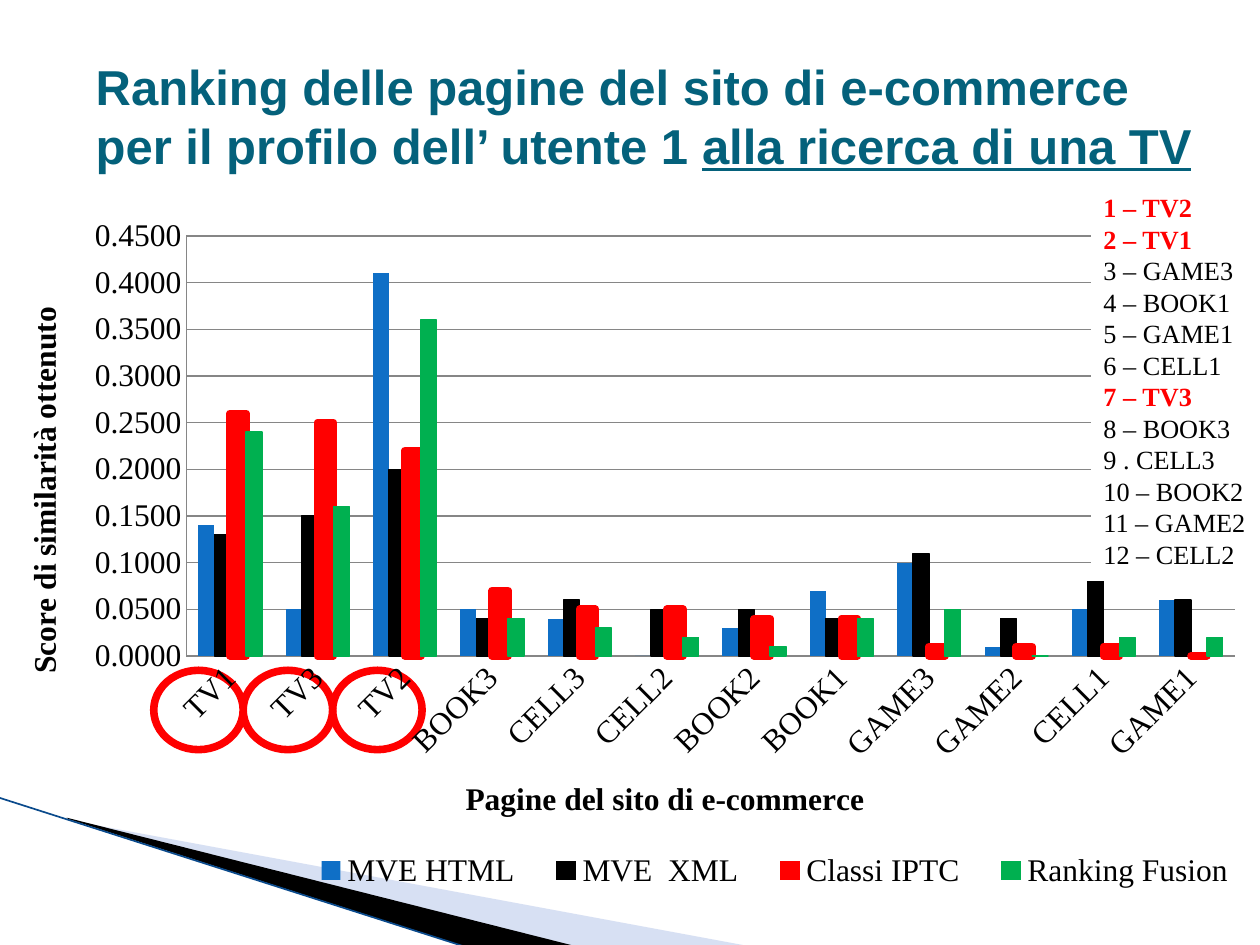
from dataclasses import dataclass
from typing import NamedTuple, Optional

from lxml.etree import SubElement
from pptx import Presentation
from pptx.chart.data import CategoryChartData
from pptx.dml.color import RGBColor
from pptx.enum.chart import XL_CHART_TYPE as ChartType
from pptx.enum.chart import XL_LEGEND_POSITION as LegendPosition
from pptx.enum.chart import XL_TICK_MARK as TickMark
from pptx.enum.shapes import MSO_CONNECTOR as Connector
from pptx.enum.shapes import MSO_SHAPE as Shape
from pptx.enum.text import MSO_ANCHOR as Anchor
from pptx.enum.text import PP_ALIGN as Align
from pptx.oxml import parse_xml
from pptx.oxml.ns import nsdecls, qn
from pptx.util import Inches, Pt

WIDTH, HEIGHT = 10, 7.5


@dataclass(frozen=True)
class Theme:
    heading_font: str = "Arial"
    body_font: str = "Times New Roman"
    heading_size: int = 28
    chart_size: int = 18
    list_size: int = 15
    heading: str = "04617B"
    ink: str = "000000"
    paper: str = "FFFFFF"
    accent: str = "FF0000"
    grid: str = "868686"
    pale: str = "9DB2E1"
    edge: str = "0A4A8C"
    thick: float = 4.33
    thin: float = 0.75


class Box(NamedTuple):
    left: float
    top: float
    width: float
    height: float

    def emu(self) -> list:
        return [Inches(length) for length in self]


class Series(NamedTuple):
    name: str
    values: tuple
    color: str
    line: Optional[float] = None


class Swoosh(NamedTuple):
    """A filled outline with its points in hundredths of an inch."""
    points: tuple
    color: str
    alpha: Optional[int] = None


THEME = Theme()

SWOOSHES = (
    Swoosh(((55, 651), (595, 751), (456, 751), (55, 650)), THEME.pale, 40),
    Swoosh(((53, 649), (457, 751), (372, 752), (54, 650)), THEME.ink),
)
PAGES = ("TV1", "TV3", "TV2", "BOOK3", "CELL3", "CELL2",
         "BOOK2", "BOOK1", "GAME3", "GAME2", "CELL1", "GAME1")
SERIES = (
    Series("MVE HTML", (0.14, 0.05, 0.41, 0.05, 0.04, 0,
                        0.03, 0.07, 0.1, 0.01, 0.05, 0.06), "0F6FC6"),
    Series("MVE  XML", (0.13, 0.15, 0.2, 0.04, 0.06, 0.05,
                        0.05, 0.04, 0.11, 0.04, 0.08, 0.06), THEME.ink, THEME.thin),
    Series("Classi IPTC", (0.26, 0.25, 0.22, 0.07, 0.05, 0.05,
                           0.04, 0.04, 0.01, 0.01, 0.01, 0), THEME.accent, THEME.thick),
    Series("Ranking Fusion", (0.24, 0.16, 0.36, 0.04, 0.03, 0.02,
                              0.01, 0.04, 0.05, 0, 0.02, 0.02), "00B050", THEME.thin),
)
RANKING = ("1 – TV2", "2 – TV1", "3 – GAME3", "4 – BOOK1", "5 – GAME1", "6 – CELL1",
           "7 – TV3", "8 – BOOK3", "9 . CELL3", "10 – BOOK2", "11 – GAME2", "12 – CELL2")


def set_font(font, color: str, **formats) -> None:
    for name, value in formats.items():
        setattr(font, name, value)
    font.color.rgb = RGBColor.from_string(color)


def paint(item, color: str) -> None:
    item.fill.solid()
    item.fill.fore_color.rgb = RGBColor.from_string(color)


def stroke(line, color: str, width: float) -> None:
    line.color.rgb = RGBColor.from_string(color)
    line.width = Pt(width)


def place(element, **shares: float) -> None:
    """Give a chart part a manual layout in shares of the chart's size."""
    for old in element.findall(qn("c:layout")):
        element.remove(old)
    layout = parse_xml(f"<c:layout {nsdecls('c')}><c:manualLayout/></c:layout>")
    manual = layout[0]
    if element.tag == qn("c:plotArea"):
        SubElement(manual, qn("c:layoutTarget"), val="inner")
    for mode in ("xMode", "yMode"):
        SubElement(manual, qn(f"c:{mode}"), val="edge")
    for name, share in shares.items():
        SubElement(manual, qn(f"c:{name}"), val=str(share))
    overlay = element.find(qn("c:overlay"))
    if overlay is None:
        element.insert(0, layout)
    else:
        overlay.addprevious(layout)


def draw_swoosh(page, swoosh: Swoosh) -> None:
    builder = page.shapes.build_freeform(*swoosh.points[0], scale=Inches(0.01))
    builder.add_line_segments(swoosh.points[1:], close=True)
    shape = builder.convert_to_shape()
    shape.shadow.inherit = False
    paint(shape, swoosh.color)
    shape.line.fill.background()
    if swoosh.alpha:
        color = shape.fill._xPr.find(".//" + qn("a:srgbClr"))
        SubElement(color, qn("a:alpha"), val=str(swoosh.alpha * 1000))


def draw_edge(page) -> None:
    ends = [Inches(length) for length in (-0.01, 6.33, 3.71, 7.52)]
    edge = page.shapes.add_connector(Connector.STRAIGHT, *ends)
    stroke(edge.line, THEME.edge, 0.95)
    SubElement(edge._element.spPr, qn("a:effectLst"))


def draw_ring(page, box: Box) -> None:
    ring = page.shapes.add_shape(Shape.OVAL, *box.emu())
    ring.shadow.inherit = False
    paint(ring, THEME.paper)
    stroke(ring.line, THEME.accent, THEME.thick)


def draw_heading(page) -> None:
    frame = page.shapes.add_textbox(*Box(0.67, 0.29, 9, 1.25).emu()).text_frame
    frame.word_wrap = True
    frame.vertical_anchor = Anchor.MIDDLE
    frame.margin_left = frame.margin_right = Inches(0.09)
    frame.margin_top = frame.margin_bottom = Inches(0.04)
    para = frame.paragraphs[0]
    for text, underline in (
        ("Ranking delle pagine del sito di e-commerce per il profilo dell’ utente 1 ", False),
        ("alla ricerca di una TV", True),
    ):
        span = para.add_run()
        span.text = text
        set_font(span.font, THEME.heading, name=THEME.heading_font,
                 size=Pt(THEME.heading_size), bold=True, underline=underline)


def style_axis(axis, title: str, **shares: float) -> None:
    axis.major_tick_mark = axis.minor_tick_mark = TickMark.NONE
    stroke(axis.format.line, THEME.grid, THEME.thin)
    para = axis.axis_title.text_frame.paragraphs[0]
    span = para.add_run()
    span.text = title
    set_font(span.font, THEME.ink, name=THEME.body_font, size=Pt(THEME.chart_size), bold=True)
    place(axis.axis_title._element, **shares)


def draw_chart(page) -> None:
    data = CategoryChartData(number_format="0.0000")
    data.categories = PAGES
    for series in SERIES:
        data.add_series(series.name, series.values)
    box = Box(0, 1.62, WIDTH, 5.51)
    chart = page.shapes.add_chart(ChartType.COLUMN_CLUSTERED, *box.emu(), data).chart
    set_font(chart.font, THEME.ink, name=THEME.body_font, size=Pt(THEME.chart_size))
    chart.has_title = False
    plot = chart.plots[0]
    plot.gap_width, plot.overlap, plot.vary_by_categories = 150, 0, False
    for series, drawn in zip(SERIES, plot.series):
        paint(drawn.format, series.color)
        drawn.invert_if_negative = False
        if series.line:
            stroke(drawn.format.line, series.color, series.line)
    style_axis(chart.category_axis, "Pagine del sito di e-commerce", x=0.365, y=0.82)
    style_axis(chart.value_axis, "Score di similarità ottenuto", x=0.015, y=0.14)
    labels = chart.category_axis.tick_labels
    set_font(labels.font, THEME.ink, name=THEME.body_font, size=Pt(THEME.chart_size))
    chart.category_axis._element.find(".//" + qn("c:txPr")).find(qn("a:bodyPr")).set("rot", "-2700000")
    scale = chart.value_axis
    scale.minimum_scale, scale.maximum_scale, scale.major_unit = 0, 0.45, 0.05
    scale.tick_labels.number_format = "0.0000"
    scale.tick_labels.number_format_is_linked = False
    stroke(scale.major_gridlines.format.line, THEME.grid, THEME.thin)
    chart.has_legend = True
    chart.legend.position = LegendPosition.BOTTOM
    chart.legend.include_in_layout = False
    place(chart.legend._element, x=0.23, y=0.92, w=0.77, h=0.08)
    place(chart._chartSpace.chart.plotArea, x=0.148, y=0.046, w=0.832, h=0.605)


def draw_ranking(page) -> None:
    panel = page.shapes.add_shape(Shape.RECTANGLE, *Box(8.66, 1.47, 1.34, 3.13).emu())
    panel.shadow.inherit = False
    paint(panel, THEME.paper)
    panel.line.fill.background()
    frame = panel.text_frame
    frame.word_wrap = True
    frame.vertical_anchor = Anchor.TOP
    frame.margin_right = 0
    for index, entry in enumerate(RANKING):
        para = frame.add_paragraph() if index else frame.paragraphs[0]
        para.alignment = Align.LEFT
        span = para.add_run()
        span.text = entry
        wanted = "TV" in entry
        set_font(span.font, THEME.accent if wanted else THEME.ink,
                 name=THEME.body_font, size=Pt(THEME.list_size), bold=wanted)


def main() -> None:
    deck = Presentation()
    deck.slide_width, deck.slide_height = Inches(WIDTH), Inches(HEIGHT)
    page = deck.slides.add_slide(deck.slide_layouts[6])
    for swoosh in SWOOSHES:
        draw_swoosh(page, swoosh)
    draw_edge(page)
    ring = Box(1.22, 5.32, 0.71, 0.63)
    for column in reversed(range(3)):
        draw_ring(page, ring._replace(left=ring.left + column * ring.width))
    draw_heading(page)
    draw_chart(page)
    draw_ranking(page)
    deck.save("out.pptx")


if __name__ == "__main__":
    main()
